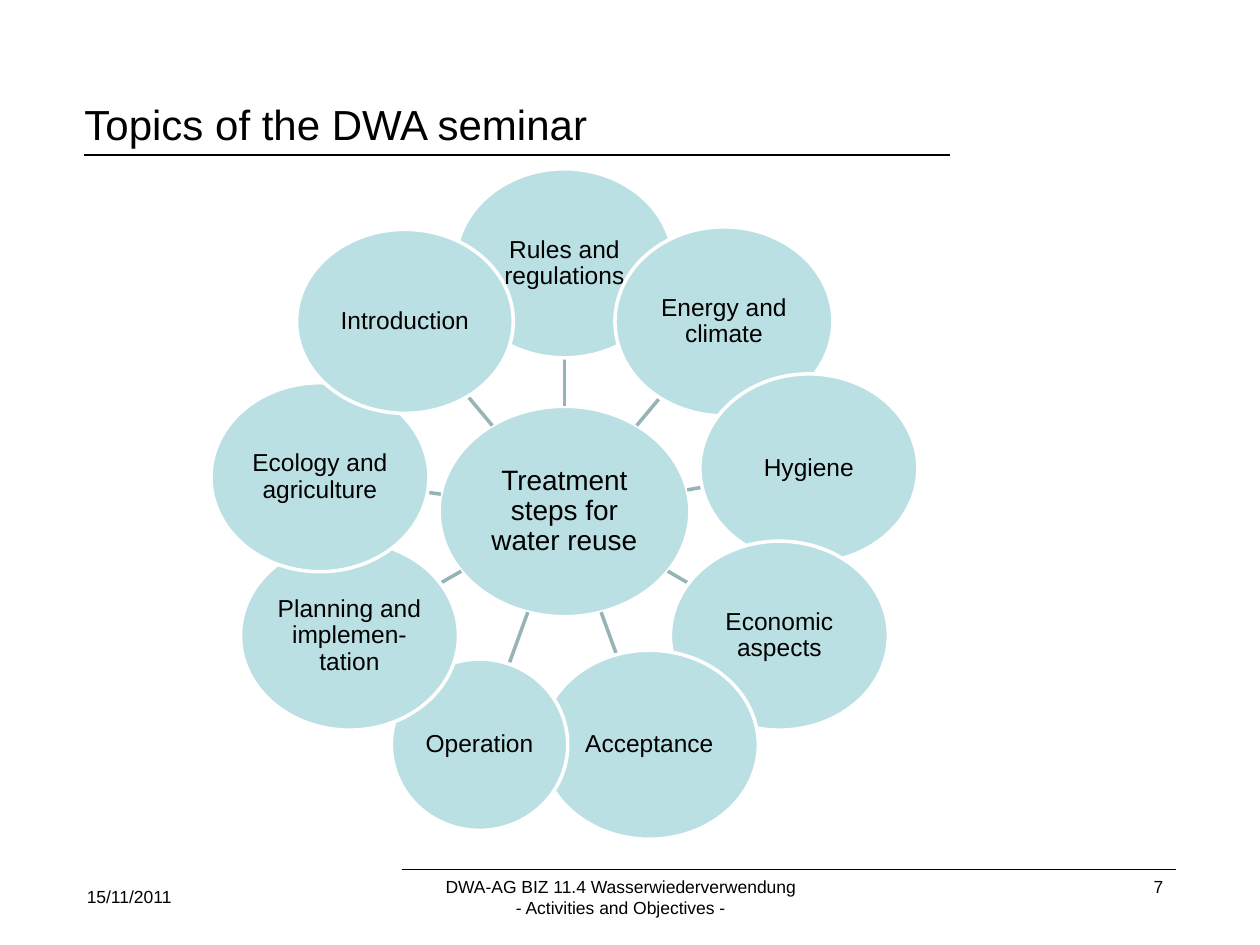
import math

import pptx
import pptx.dml.color
import pptx.enum.shapes
import pptx.enum.text
import pptx.oxml.ns
import pptx.util
from lxml import etree

Inches = pptx.util.Inches
Pt = pptx.util.Pt
ALIGN = pptx.enum.text.PP_ALIGN
ANCHOR = pptx.enum.text.MSO_ANCHOR

COLORS = {"text": "000000", "rule": "000000", "bubble": "BBE0E3", "edge": "FFFFFF", "spoke": "96B3B6"}
HUB = ("Treatment steps for water reuse", 1.99, 1.67)
TOPICS = [
    ("Rules and regulations", 1.73, 1.5, 0),
    ("Energy and climate", 1.73, 1.5, 0),
    ("Hygiene", 1.73, 1.5, 0),
    ("Economic aspects", 1.73, 1.5, 0),
    ("Acceptance", 1.73, 1.5, 0),
    ("Operation", 1.4, 1.36, 0),
    ("Planning and implemen-tation", 1.73, 1.5, 0),
    ("Ecology and agriculture", 1.73, 1.5, 0.07),
    ("Introduction", 1.72, 1.46, 0),
]


def rgb(name):
    return pptx.dml.color.RGBColor.from_string(COLORS[name])


def apply(obj, values):
    for name, value in values.items():
        setattr(obj, name, value)


def write(sp, text, size, align, anchor, margins, spacing=1.0):
    tf = sp.text_frame
    left, top, right, bottom = (Inches(m) for m in margins)
    apply(tf, {"word_wrap": True, "auto_size": pptx.enum.text.MSO_AUTO_SIZE.NONE,
               "vertical_anchor": anchor, "margin_left": left, "margin_top": top,
               "margin_right": right, "margin_bottom": bottom})
    tf.text = text
    for p in tf.paragraphs:
        apply(p, {"alignment": align, "line_spacing": spacing})
        for r in p.runs:
            apply(r.font, {"name": "Arial", "size": Pt(size)})
            r.font.color.rgb = rgb("text")


def add_line(s, start, end, color, width):
    line = s.shapes.add_connector(pptx.enum.shapes.MSO_CONNECTOR.STRAIGHT,
                                  *(Inches(v) for v in (*start, *end)))
    line.line.color.rgb = rgb(color)
    line.line.width = Pt(width)
    etree.SubElement(line.element.spPr, pptx.oxml.ns.qn("a:effectLst"))


def add_bubble(s, center, width, height, text, size):
    sp = s.shapes.add_shape(pptx.enum.shapes.MSO_SHAPE.OVAL,
                            Inches(center[0] - width / 2), Inches(center[1] - height / 2),
                            Inches(width), Inches(height))
    sp.shadow.inherit = False
    sp.fill.solid()
    sp.fill.fore_color.rgb = rgb("bubble")
    sp.line.color.rgb = rgb("edge")
    sp.line.width = Pt(2)
    write(sp, text, size, ALIGN.CENTER, ANCHOR.MIDDLE, [0.01] * 4, 0.9)


def edge_point(center, width, height, dx, dy):
    scale = 1 / math.hypot(dx / (width / 2), dy / (height / 2))
    return center[0] + dx * scale, center[1] + dy * scale


def add_title(s, left, top, width, height):
    add_line(s, (left, top + height), (left + 6.87, top + height), "rule", 0.75)
    title = s.shapes.title
    apply(title, {"left": Inches(left), "top": Inches(top),
                  "width": Inches(width), "height": Inches(height)})
    write(title, "Topics of the DWA seminar", 24, ALIGN.LEFT, ANCHOR.BOTTOM, [0, 0.05, 0, 0.05])


def add_footer(s, left, top, right):
    add_line(s, (left + 2.6, top), (right, top), "rule", 0.75)
    for text, x, y, width, height, align in [
        ("15/11/2011", left, top + 0.08, 2.58, 0.27, ALIGN.LEFT),
        ("DWA-AG BIZ 11.4 Wasserwiederverwendung\v- Activities and Objectives -",
         left + 2.76, top, 3.15, 0.43, ALIGN.CENTER),
        ("7", right - 1.89, top, 1.89, 0.27, ALIGN.RIGHT),
    ]:
        sp = s.shapes.add_textbox(Inches(x), Inches(y), Inches(width), Inches(height))
        write(sp, text, 10, align, ANCHOR.TOP, [0.1, 0.05, 0.1, 0.05])


def add_topic_wheel(s, cx, cy, radius):
    hub_text, hub_width, hub_height = HUB
    add_bubble(s, (cx, cy), hub_width, hub_height, hub_text, 16)
    for i, (text, width, height, drop) in enumerate(TOPICS):
        angle = 2 * math.pi * i / len(TOPICS)
        dx, dy = radius * math.sin(angle), drop - radius * math.cos(angle)
        center = (cx + dx, cy + dy)
        add_line(s, edge_point((cx, cy), hub_width, hub_height, dx, dy),
                 edge_point(center, width, height, -dx, -dy), "spoke", 2)
        add_bubble(s, center, width, height, text, 14)


def main():
    prs = pptx.Presentation()
    apply(prs, {"slide_width": Inches(10), "slide_height": Inches(7.5)})
    s = prs.slides.add_slide(prs.slide_layouts[5])
    add_title(s, 0.67, 0.52, 6.85, 0.71)
    add_footer(s, 0.59, 6.9, 9.33)
    add_topic_wheel(s, 4.48, 4.06, 1.97)
    prs.save("out.pptx")


if __name__ == "__main__":
    main()
